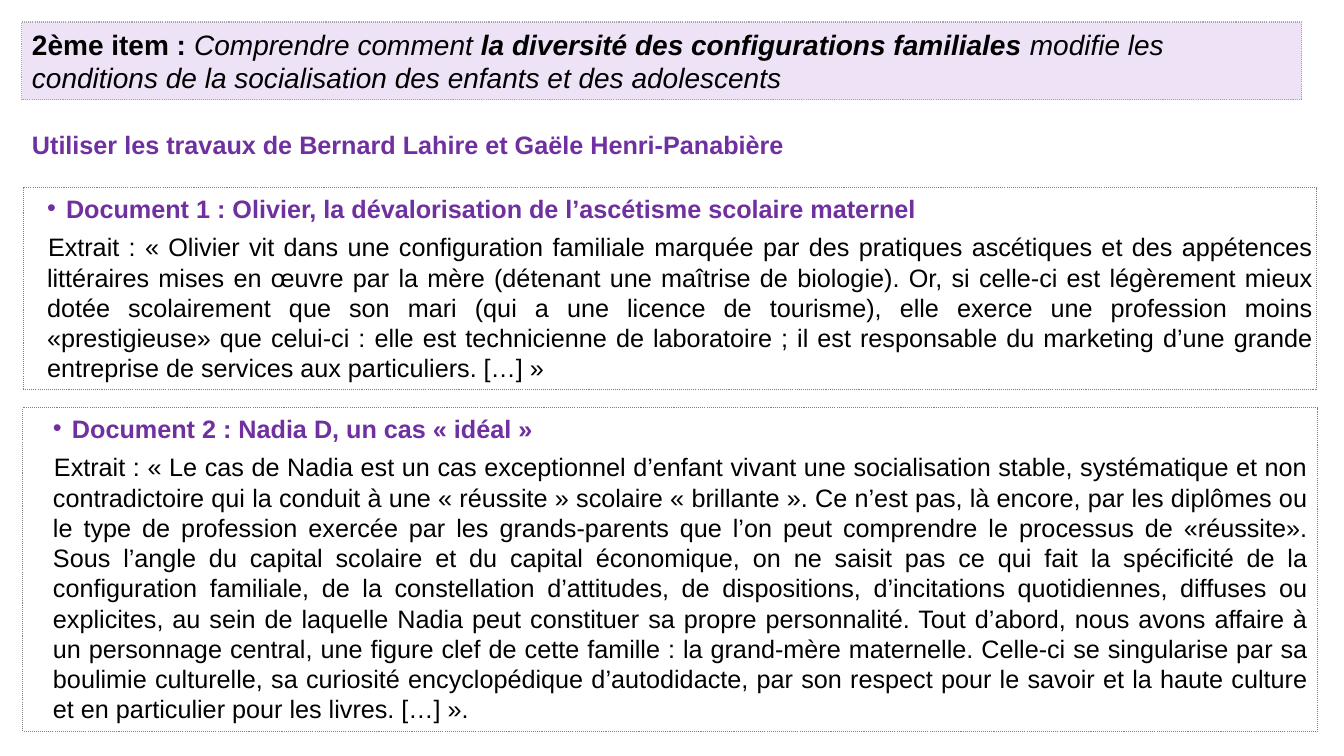
from lxml.etree import SubElement
from pptx import Presentation
from pptx.dml.color import RGBColor
from pptx.enum.dml import MSO_LINE
from pptx.enum.shapes import MSO_SHAPE
from pptx.enum.text import MSO_ANCHOR, MSO_AUTO_SIZE, PP_ALIGN
from pptx.oxml.ns import qn
from pptx.util import Pt

PX = 914400 / 100.8
SLIDE_WIDTH, SLIDE_HEIGHT = 1344, 756
BLACK, PURPLE, LILAC = "000000", "7030A0", "EDE2F6"
GREY, LIGHT_GREY = "808080", "A6A6A6"

# Item title: text, bold, italic
ITEM_TITLE = [
    ("2ème item : ", True, False),
    ("Comprendre comment ", False, True),
    ("la diversité des configurations familiales ", True, True),
    ("modifie les conditions de la socialisation des enfants et des adolescents", False, True),
]
AUTHORS = "Utiliser les travaux de Bernard Lahire et Gaële Henri-Panabière"

# Documents: box (left, top, width, height), side inset, heading, sentences of the extract
DOCUMENTS = [
    (
        (23, 188, 1294, 202), 4,
        "Document 1 : Olivier, la dévalorisation de l’ascétisme scolaire maternel",
        [
            "Extrait : « Olivier vit dans une configuration familiale marquée par des pratiques "
            "ascétiques et des appétences littéraires mises en œuvre par la mère (détenant une "
            "maîtrise de biologie).",
            "Or, si celle-ci est légèrement mieux dotée scolairement que son mari (qui a une "
            "licence de tourisme), elle exerce une profession moins «prestigieuse» que celui-ci : "
            "elle est technicienne de laboratoire ; il est responsable du marketing d’une grande "
            "entreprise de services aux particuliers. […] »",
        ],
    ),
    (
        (23, 408, 1295, 324), 10,
        "Document 2 : Nadia D, un cas « idéal »",
        [
            "Extrait : « Le cas de Nadia est un cas exceptionnel d’enfant vivant une "
            "socialisation stable, systématique et non contradictoire qui la conduit à une "
            "« réussite » scolaire « brillante ».",
            "Ce n’est pas, là encore, par les diplômes ou le type de profession exercée par les "
            "grands-parents que l’on peut comprendre le processus de «réussite».",
            "Sous l’angle du capital scolaire et du capital économique, on ne saisit pas ce qui "
            "fait la spécificité de la configuration familiale, de la constellation d’attitudes, "
            "de dispositions, d’incitations quotidiennes, diffuses ou explicites, au sein de "
            "laquelle Nadia peut constituer sa propre personnalité.",
            "Tout d’abord, nous avons affaire à un personnage central, une figure clef de cette "
            "famille : la grand-mère maternelle.",
            "Celle-ci se singularise par sa boulimie culturelle, sa curiosité encyclopédique "
            "d’autodidacte, par son respect pour le savoir et la haute culture et en particulier "
            "pour les livres. […] ».",
        ],
    ),
]


def px(length):
    return round(length * PX)


def rgb(color):
    return RGBColor.from_string(color)


def set_frame(shape, side_inset=10):
    frame = shape.text_frame
    frame.word_wrap = True
    frame.auto_size = MSO_AUTO_SIZE.SHAPE_TO_FIT_TEXT
    frame.vertical_anchor = MSO_ANCHOR.TOP
    frame.margin_left = frame.margin_right = px(side_inset)
    frame.margin_top = frame.margin_bottom = px(5)
    return frame


def add_box(box, line_color, fill_color=None, side_inset=10):
    """Add a dotted rectangle and return its text frame."""
    shape = slide.shapes.add_shape(MSO_SHAPE.RECTANGLE, *map(px, box))
    shape.shadow.inherit = False
    if fill_color:
        shape.fill.solid()
        shape.fill.fore_color.rgb = rgb(fill_color)
    else:
        shape.fill.background()
    shape.line.color.rgb = rgb(line_color)
    shape.line.width = Pt(0.75)
    shape.line.dash_style = MSO_LINE.ROUND_DOT
    return set_frame(shape, side_inset)


def style(paragraph, size, color, bold=None, align=PP_ALIGN.LEFT):
    paragraph.alignment = align
    paragraph.space_before = Pt(6)
    font = paragraph.font
    font.name, font.size, font.bold = "Arial", Pt(size), bold
    font.color.rgb = rgb(color)


def indent(paragraph, left, first_line):
    properties = paragraph._p.get_or_add_pPr()
    properties.set("marL", str(px(left)))
    properties.set("indent", str(px(first_line)))
    return properties


def add_bullet(properties, color):
    """Insert the bullet before the default run properties, as the schema requires."""
    bullet_color = SubElement(properties, qn("a:buClr"))
    SubElement(bullet_color, qn("a:srgbClr"), val=color)
    bullet_font = SubElement(properties, qn("a:buFont"), typeface="Arial")
    bullet = SubElement(properties, qn("a:buChar"), char="•")
    run_defaults = properties.find(qn("a:defRPr"))
    for part in (bullet_color, bullet_font, bullet):
        run_defaults.addprevious(part)


presentation = Presentation()
presentation.slide_width, presentation.slide_height = px(SLIDE_WIDTH), px(SLIDE_HEIGHT)
slide = presentation.slides.add_slide(presentation.slide_layouts[6])

item_title = add_box((22, 22, 1280, 78), LIGHT_GREY, LILAC).paragraphs[0]
style(item_title, 20, BLACK)
for words, bold, italic in ITEM_TITLE:
    run = item_title.add_run()
    run.text = words
    run.font.bold, run.font.italic = bold, italic

authors_box = slide.shapes.add_textbox(*map(px, (22, 124, 1313, 40)))
authors = set_frame(authors_box).paragraphs[0]
authors.text = AUTHORS
style(authors, 18, PURPLE, bold=True)

for box, side_inset, heading_text, sentences in DOCUMENTS:
    frame = add_box(box, GREY, side_inset=side_inset)
    heading = frame.paragraphs[0]
    heading.text = heading_text
    style(heading, 18, PURPLE, bold=True)
    add_bullet(indent(heading, 39, -19), PURPLE)

    extract = frame.add_paragraph()
    extract.text = " ".join(sentences)
    style(extract, 18, BLACK, bold=False, align=PP_ALIGN.JUSTIFY)
    indent(extract, 20, 1)

presentation.save("out.pptx")
